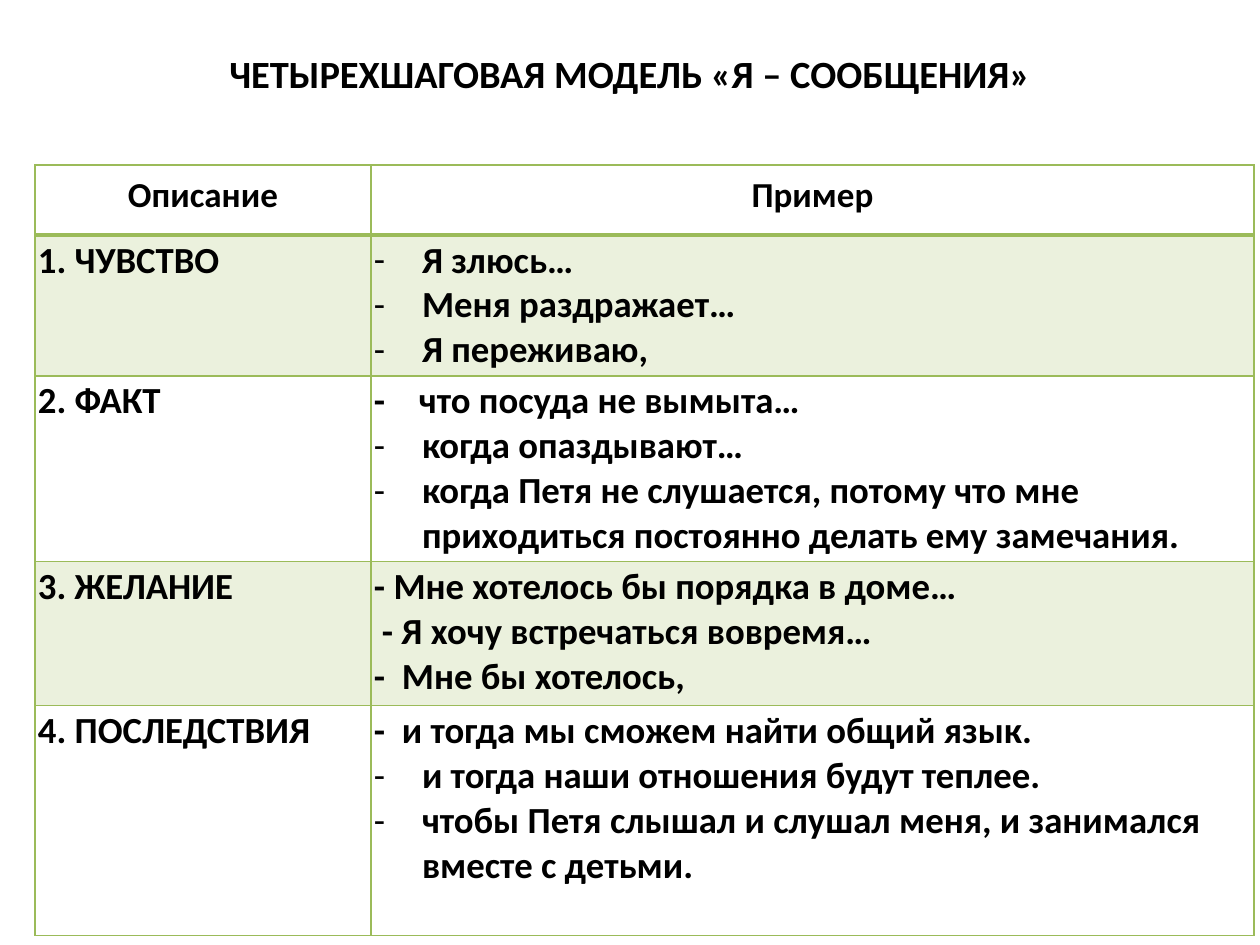
from lxml.etree import SubElement as add_child
from pptx import Presentation
from pptx.dml.color import RGBColor
from pptx.enum.text import MSO_ANCHOR as Anchor, PP_ALIGN as Align
from pptx.oxml.ns import qn
from pptx.util import Emu, Pt

SCALE = 914400 / 126
FONT = "Calibri"
BLACK = "000000"
GREEN = "9BBB59"
COLUMNS = [336, 883]
ROWS = [70, 140, 185, 144, 230]
HEADINGS = ["Описание", "Пример"]
BULLET = {"margin": 48, "hang": 48, "bullet": "-"}
STEPS = [
    ("1. ЧУВСТВО", [
        ("Я злюсь…", BULLET),
        ("Меня раздражает…", BULLET),
        ("Я переживаю,", BULLET),
    ]),
    ("2. ФАКТ", [
        ("-\tчто посуда не вымыта…", {"margin": 45, "hang": 45}),
        ("когда опаздывают…", BULLET),
        ("когда Петя не слушается, потому что мне приходиться "
         "постоянно делать ему замечания.", BULLET),
    ]),
    ("3. ЖЕЛАНИЕ", [
        ("- Мне хотелось бы порядка в доме…", {}),
        ("- Я хочу встречаться вовремя…", {"margin": 8}),
        ("-\tМне бы хотелось,", {"margin": 28, "hang": 28}),
    ]),
    ("4. ПОСЛЕДСТВИЯ", [
        ("-\tи тогда мы сможем найти общий язык.", {"margin": 28, "hang": 28}),
        ("и тогда наши отношения будут теплее.", BULLET),
        ("чтобы Петя слышал и слушал меня, и занимался вместе с детьми.", BULLET),
    ]),
]


def px(length):
    return Emu(round(length * SCALE))


def color(value):
    return RGBColor.from_string(value)


def write(para, text, size=21, align=Align.LEFT, line=None, gap=None,
          margin=0, hang=0, bullet=None):
    para.alignment = align
    if line:
        para.line_spacing = line
    if gap:
        para.space_before = para.space_after = Pt(gap)
    props = para._p.get_or_add_pPr()
    props.set("marL", str(px(margin)))
    props.set("indent", str(px(-hang)))
    if bullet:
        add_child(props, qn("a:buFont"), typeface=FONT)
        add_child(props, qn("a:buChar"), char=bullet)
    span = para.add_run()
    span.text = text
    span.font.name = FONT
    span.font.size = Pt(size)
    span.font.bold = True
    span.font.color.rgb = color(BLACK)


def set_borders(cell, bottom=1):
    props = cell._tc.get_or_add_tcPr()
    widths = {"a:lnL": 1, "a:lnR": 1, "a:lnT": 1, "a:lnB": bottom}
    for index, (tag, width) in enumerate(widths.items()):
        border = add_child(props, qn(tag), w=str(Pt(width)))
        fill = add_child(border, qn("a:solidFill"))
        add_child(fill, qn("a:srgbClr"), val=GREEN)
        props.insert(index, border)


def format_cell(cell, lines, banded=False, bottom=1):
    cell.margin_left = cell.margin_right = px(3)
    cell.margin_top = cell.margin_bottom = px(3)
    if banded:
        cell.fill.solid()
        cell.fill.fore_color.rgb = color(GREEN)
        shade = cell._tc.tcPr.find(".//" + qn("a:srgbClr"))
        add_child(shade, qn("a:alpha"), val="20000")
    else:
        cell.fill.background()
    set_borders(cell, bottom)
    frame = cell.text_frame
    for index, (text, style) in enumerate(lines):
        para = frame.add_paragraph() if index else frame.paragraphs[0]
        write(para, text, **style)


def place_title(page, left, top, width, height):
    title = page.shapes.title
    title.left, title.top = px(left), px(top)
    title.width, title.height = px(width), px(height)
    frame = title.text_frame
    frame.vertical_anchor = Anchor.MIDDLE
    frame.margin_bottom = px(94)
    write(frame.paragraphs[0], "ЧЕТЫРЕХШАГОВАЯ МОДЕЛЬ «Я – СООБЩЕНИЯ»",
          size=22, align=Align.CENTER)


def place_table(page, left, top):
    box = page.shapes.add_table(len(ROWS), len(COLUMNS), px(left), px(top),
                                px(sum(COLUMNS)), px(sum(ROWS)))
    table = box.table
    table.first_row = table.horz_banding = False
    for column, width in zip(table.columns, COLUMNS):
        column.width = px(width)
    for row, height in zip(table.rows, ROWS):
        row.height = px(height)
    heading_style = {"size": 20, "align": Align.CENTER, "line": 1.15, "gap": 9}
    for column, heading in enumerate(HEADINGS):
        format_cell(table.cell(0, column), [(heading, heading_style)], bottom=2)
    for row, (step, examples) in enumerate(STEPS, 1):
        banded = row % 2 == 1
        format_cell(table.cell(row, 0), [(step, {})], banded)
        format_cell(table.cell(row, 1), examples, banded)


def main():
    deck = Presentation()
    deck.slide_width, deck.slide_height = px(1260), px(945)
    page = deck.slides.add_slide(deck.slide_layouts[5])
    place_title(page, 63, 38, 1134, 158)
    place_table(page, 35, 165)
    deck.save("out.pptx")


if __name__ == "__main__":
    main()
